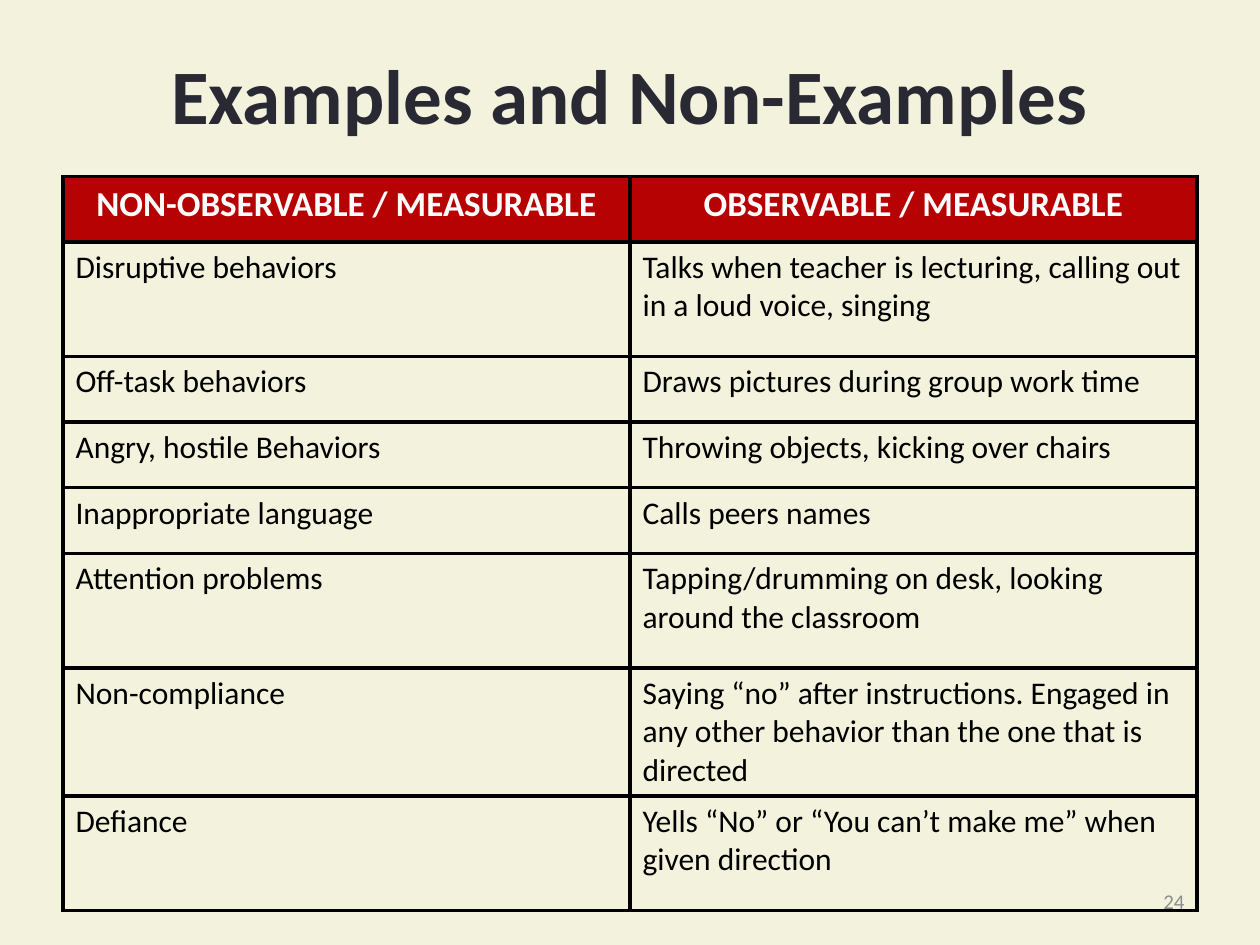
from lxml import etree
from pptx import Presentation
from pptx.dml.color import RGBColor
from pptx.enum.text import MSO_ANCHOR, PP_ALIGN
from pptx.oxml.ns import qn
from pptx.util import Pt

LEFT, CENTER, RIGHT = PP_ALIGN.LEFT, PP_ALIGN.CENTER, PP_ALIGN.RIGHT
MIDDLE = MSO_ANCHOR.MIDDLE

CREAM = RGBColor(0xF3, 0xF2, 0xDC)
CHARCOAL = RGBColor(0x29, 0x29, 0x34)
RED = RGBColor(0xB6, 0x02, 0x02)
WHITE = RGBColor(0xFF, 0xFF, 0xFF)
BLACK = RGBColor(0, 0, 0)
GRAY = RGBColor(0x8D, 0x8D, 0x8F)

TITLE = "Examples and Non-Examples"
PAGE_NUMBER = "24"
SHORT, TALL, TALLEST = 37.5, 65.5, 73
ROWS = [
    (SHORT, "NON-OBSERVABLE / MEASURABLE", "OBSERVABLE / MEASURABLE"),
    (TALL, "Disruptive behaviors",
     "Talks when teacher is lecturing, calling out in a loud voice, singing"),
    (SHORT, "Off-task behaviors", "Draws pictures during group work time"),
    (SHORT, "Angry, hostile Behaviors", "Throwing objects, kicking over chairs"),
    (SHORT, "Inappropriate language", "Calls peers names"),
    (TALL, "Attention problems",
     "Tapping/drumming on desk, looking around the classroom"),
    (TALLEST, "Non-compliance",
     "Saying “no” after instructions. Engaged in any other behavior than the one "
     "that is directed"),
    (TALL, "Defiance", "Yells “No” or “You can’t make me” when given direction"),
]

MARGIN, CONTENT_WIDTH = 36, 648
TABLE_TOP = 100.8
BORDER_WIDTH = 2.25

TITLE_FORMAT = {"size": Pt(44), "bold": True, "color": CHARCOAL}
HEADER_FORMAT = {"size": Pt(20), "bold": True, "color": WHITE}
BODY_FORMAT = {"size": Pt(18), "bold": False, "color": BLACK}
NUMBER_FORMAT = {"size": Pt(12), "bold": False, "color": GRAY}


def write_text(text_frame, text, text_format, alignment):
    paragraph = text_frame.paragraphs[0]
    paragraph.alignment = alignment
    run = paragraph.add_run()
    run.text = text
    run.font.name = "Calibri"
    for name, value in text_format.items():
        if name == "color":
            run.font.color.rgb = value
        else:
            setattr(run.font, name, value)


def add_borders(cell):
    """Draw all four borders; call before filling, as the schema puts lines first."""
    properties = cell._tc.get_or_add_tcPr()
    for side in ("a:lnL", "a:lnR", "a:lnT", "a:lnB"):
        line = etree.SubElement(properties, qn(side), w=str(Pt(BORDER_WIDTH)))
        fill = etree.SubElement(line, qn("a:solidFill"))
        etree.SubElement(fill, qn("a:srgbClr"), val=str(BLACK))


def add_title(slide):
    title = slide.shapes.title
    title.left, title.top = Pt(MARGIN), Pt(21.6)
    title.width, title.height = Pt(CONTENT_WIDTH), Pt(63.4)
    title.text_frame.vertical_anchor = MIDDLE
    write_text(title.text_frame, TITLE, TITLE_FORMAT, CENTER)


def add_behavior_table(slide):
    column_count = len(ROWS[0]) - 1
    total_height = sum(row[0] for row in ROWS)
    table = slide.shapes.add_table(
        len(ROWS), column_count, Pt(MARGIN), Pt(TABLE_TOP),
        Pt(CONTENT_WIDTH), Pt(total_height)).table
    table.horz_banding = False
    for column in table.columns:
        column.width = Pt(CONTENT_WIDTH / column_count)
    for row_index, (height, *texts) in enumerate(ROWS):
        table.rows[row_index].height = Pt(height)
        is_header = row_index == 0
        for column_index, text in enumerate(texts):
            cell = table.cell(row_index, column_index)
            add_borders(cell)
            if is_header:
                cell.fill.solid()
                cell.fill.fore_color.rgb = RED
                write_text(cell.text_frame, text, HEADER_FORMAT, CENTER)
            else:
                cell.fill.background()
                write_text(cell.text_frame, text, BODY_FORMAT, LEFT)


def add_page_number(slide):
    width = 168
    box = slide.shapes.add_textbox(
        Pt(MARGIN + CONTENT_WIDTH - width), Pt(500.5), Pt(width), Pt(28.8))
    box.text_frame.word_wrap = True
    box.text_frame.vertical_anchor = MIDDLE
    write_text(box.text_frame, PAGE_NUMBER, NUMBER_FORMAT, RIGHT)


def main():
    presentation = Presentation()
    presentation.slide_width, presentation.slide_height = Pt(720), Pt(540)
    title_only = presentation.slide_layouts.get_by_name("Title Only")
    slide = presentation.slides.add_slide(title_only)
    slide.background.fill.solid()
    slide.background.fill.fore_color.rgb = CREAM
    add_title(slide)
    add_behavior_table(slide)
    add_page_number(slide)
    presentation.save("out.pptx")


if __name__ == "__main__":
    main()
